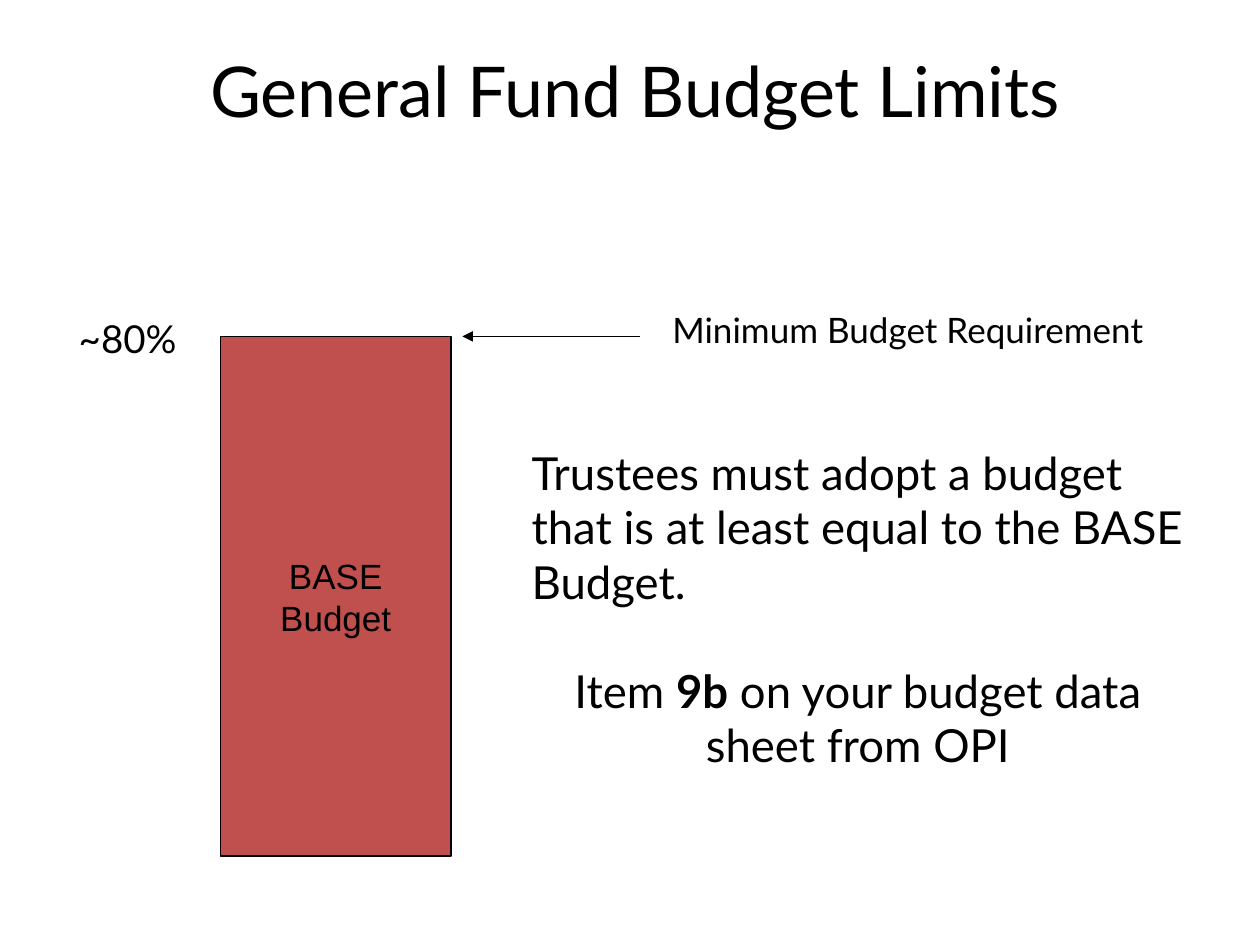
from collections import namedtuple

from lxml.etree import SubElement
from pptx import Presentation
from pptx.dml.color import RGBColor
from pptx.enum.shapes import MSO_CONNECTOR as Connector, MSO_SHAPE as Shape
from pptx.enum.text import MSO_ANCHOR as Anchor, PP_ALIGN as Align
from pptx.oxml.ns import qn
from pptx.util import Inches, Pt

WIDTH, HEIGHT = 10, 7.5
BLACK, RED = "000000", "C0504D"
Box = namedtuple("Box", "left top width height")


def color(code):
    """Turn a hex string into a colour."""
    return RGBColor.from_string(code)


def lengths(box):
    """Turn a box in inches into slide lengths."""
    return [Inches(value) for value in box]


def style(para, size, font="Lato", align=Align.LEFT):
    """Format a paragraph and all of its runs."""
    para.alignment = align
    for span in para.runs:
        span.font.size = Pt(size)
        span.font.name = font
        span.font.color.rgb = color(BLACK)


def add_label(page, box, text, size, align=Align.CENTER, right_inset=0.1):
    """Place a wrapped text box and return its frame."""
    frame = page.shapes.add_textbox(*lengths(box)).text_frame
    frame.word_wrap = True
    frame.margin_right = Inches(right_inset)
    frame.text = text
    style(frame.paragraphs[0], size, align=align)
    return frame


def add_budget_bar(page, box):
    """Draw the base budget bar with its share beside the top edge."""
    bar = page.shapes.add_shape(Shape.RECTANGLE, *lengths(box))
    bar.shadow.inherit = False
    bar.fill.solid()
    bar.fill.fore_color.rgb = color(RED)
    bar.line.color.rgb = color(BLACK)
    bar.line.width = Pt(0.75)
    frame = bar.text_frame
    frame.word_wrap = True
    frame.vertical_anchor = Anchor.MIDDLE
    frame.text = "BASE Budget"
    style(frame.paragraphs[0], 20, "Arial", Align.CENTER)
    share = Box(box.left - 1.23, box.top - 0.22, 1.06, 0.47)
    add_label(page, share, "~80%", 22, Align.RIGHT, 0.18)


def add_minimum(page, box, level, tip):
    """Name the minimum requirement and point from it to the bar."""
    add_label(page, box, "Minimum Budget Requirement", 20)
    ends = lengths((box.left, level, tip, level))
    arrow = page.shapes.add_connector(Connector.STRAIGHT, *ends)
    arrow.line.color.rgb = color(BLACK)
    arrow.line.width = Pt(0.75)
    SubElement(arrow.line._get_or_add_ln(), qn("a:tailEnd"), type="triangle")
    SubElement(arrow._element.spPr, qn("a:effectLst"))


def add_explanation(page, box):
    """State the rule and where its figure is found."""
    rule = "Trustees must adopt a budget that is at least equal to the BASE Budget."
    frame = add_label(page, box, rule, 26, Align.LEFT)
    para = frame.add_paragraph()
    for text in ("Item ", "9b", " on your budget data sheet from OPI"):
        span = para.add_run()
        span.text = text
        span.font.bold = text == "9b"
    style(para, 26, align=Align.CENTER)
    para.space_before = Pt(31.2)


def main():
    """Build the budget limits slide."""
    deck = Presentation()
    deck.slide_width, deck.slide_height = Inches(WIDTH), Inches(HEIGHT)
    page = deck.slides.add_slide(deck.slide_layouts[6])
    bar = Box(0.175 * WIDTH, 2.67, 1.83, 0.55 * HEIGHT)
    add_budget_bar(page, bar)
    title = Box(0.025 * WIDTH, 0.33, 9.58, 0.77)
    add_label(page, title, "General Fund Budget Limits", 40)
    add_explanation(page, Box(4.12, 3.48, 5.38, 2.73))
    tip = bar.left + bar.width + 0.09
    add_minimum(page, Box(5.08, 0.32 * HEIGHT, 4.25, 0.44), bar.top, tip)
    deck.save("out.pptx")


if __name__ == "__main__":
    main()
